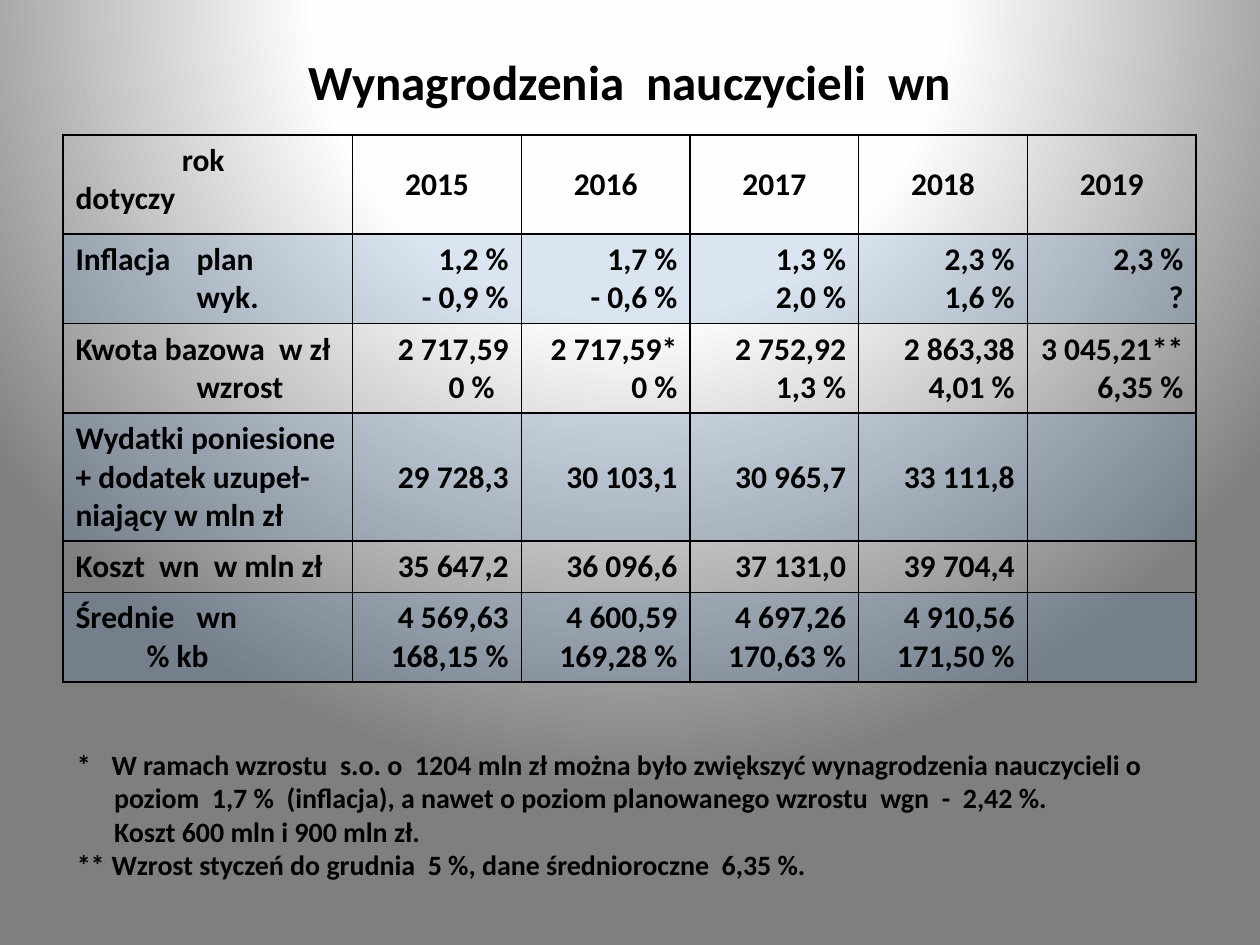
from dataclasses import dataclass

from pptx import Presentation
from pptx.dml.color import RGBColor
from pptx.enum.text import MSO_ANCHOR, PP_ALIGN
from pptx.oxml import parse_xml
from pptx.oxml.ns import nsdecls
from pptx.util import Cm, Pt

LEFT, CENTER, RIGHT = PP_ALIGN.LEFT, PP_ALIGN.CENTER, PP_ALIGN.RIGHT
TOP, MIDDLE = MSO_ANCHOR.TOP, MSO_ANCHOR.MIDDLE

FONT = "Calibri"
COLORS = {"text": "000000", "border": "000000", "band": "4F81BD",
          "glow": "FFFFFF", "halo": "FEFEFE", "edge": "7F7F7F"}
BAND_OPACITY = 20
LABEL_TAB = 2.44
NOTE_TAB = 0.7


@dataclass
class Line:
    text: str
    indent: float = 0
    tab: float = 0


@dataclass
class Row:
    height: float
    label: list[Line]
    values: list[str]
    banded: bool = False
    align: PP_ALIGN = RIGHT
    label_anchor: MSO_ANCHOR = MIDDLE


COLUMN_WIDTHS = [5.84] + [3.4] * 5
ROWS = [
    Row(2, [Line("rok", 2.14), Line("dotyczy")],
        ["2015", "2016", "2017", "2018", "2019"], align=CENTER, label_anchor=TOP),
    Row(1.8, [Line("Inflacja\tplan", tab=LABEL_TAB), Line("wyk.", LABEL_TAB)],
        ["1,2 %\n- 0,9 %", "1,7 %\n- 0,6 %", "1,3 %\n2,0 %", "2,3 %\n1,6 %", "2,3 %\n?"],
        banded=True),
    Row(1.8, [Line("Kwota bazowa  w zł"), Line("wzrost", LABEL_TAB)],
        ["2 717,59\n0 %  ", "2 717,59*\n0 %", "2 752,92\n1,3 %", "2 863,38\n4,01 %",
         "3 045,21**\n6,35 %"]),
    Row(2.58, [Line("Wydatki poniesione"), Line("+ dodatek uzupeł-"), Line("niający w mln zł")],
        ["29 728,3", "30 103,1", "30 965,7", "33 111,8", ""], banded=True),
    Row(1.03, [Line("Koszt  wn  w mln zł")],
        ["35 647,2", "36 096,6", "37 131,0", "39 704,4", ""]),
    Row(1.8, [Line("Średnie   wn".replace("   ", "\t"), tab=LABEL_TAB), Line("% kb", 1.43)],
        ["4 569,63\n168,15 %", "4 600,59\n169,28 %", "4 697,26\n170,63 %",
         "4 910,56\n171,50 %", ""], banded=True),
]
NOTES = [
    Line("*\tW ramach wzrostu  s.o. o  1204 mln zł można było zwiększyć "
         "wynagrodzenia nauczycieli o", tab=NOTE_TAB),
    Line("poziom  1,7 %  (inflacja), a nawet o poziom planowanego wzrostu  wgn  -  2,42 %.", 0.75),
    Line("Koszt 600 mln i 900 mln zł.", 0.75),
    Line("**\tWzrost styczeń do grudnia  5 %, dane średnioroczne  6,35 %.", tab=NOTE_TAB),
]


def write_lines(frame, lines: list[Line], *, size: float = 18, align: PP_ALIGN = LEFT) -> None:
    """Write one bold paragraph per line, with its indent and tab stop."""
    for index, line in enumerate(lines):
        paragraph = frame.paragraphs[0] if index == 0 else frame.add_paragraph()
        paragraph.alignment = align
        properties = paragraph._p.get_or_add_pPr()
        if line.indent:
            properties.set("marL", str(Cm(line.indent)))
        if line.tab:
            properties.append(parse_xml(
                f'<a:tabLst {nsdecls("a")}><a:tab pos="{Cm(line.tab)}" algn="l"/></a:tabLst>'))
        run = paragraph.add_run()
        run.text = line.text
        run.font.name = FONT
        run.font.size = Pt(size)
        run.font.bold = True
        run.font.color.rgb = RGBColor.from_string(COLORS["text"])


def set_background(slide) -> None:
    """Radial gradient centred above the slide."""
    stops = "".join(
        f'<a:gs pos="{position * 1000}"><a:srgbClr val="{COLORS[name]}"/></a:gs>'
        for position, name in ((0, "glow"), (40, "halo"), (100, "edge")))
    slide.element.cSld.insert(0, parse_xml(
        f'<p:bg {nsdecls("p", "a")}><p:bgPr><a:gradFill rotWithShape="1">'
        f'<a:gsLst>{stops}</a:gsLst><a:path path="circle">'
        '<a:fillToRect l="50000" t="-80000" r="50000" b="180000"/></a:path>'
        '</a:gradFill><a:effectLst/></p:bgPr></p:bg>'))


def style_cell(cell, *, banded: bool, anchor: MSO_ANCHOR) -> None:
    """Set borders, fill and vertical position of a cell."""
    cell.vertical_anchor = anchor
    properties = cell._tc.get_or_add_tcPr()
    for side in "LRTB":
        properties.append(parse_xml(
            f'<a:ln{side} {nsdecls("a")} w="{Pt(1)}"><a:solidFill>'
            f'<a:srgbClr val="{COLORS["border"]}"/></a:solidFill></a:ln{side}>'))
    if not banded:
        cell.fill.background()
        return
    cell.fill.solid()
    cell.fill.fore_color.rgb = RGBColor.from_string(COLORS["band"])
    properties.find(".//{*}solidFill/{*}srgbClr[@val='%s']" % COLORS["band"]).append(
        parse_xml(f'<a:alpha {nsdecls("a")} val="{BAND_OPACITY * 1000}"/>'))


def add_pay_table(slide) -> None:
    heights = [row.height for row in ROWS]
    table = slide.shapes.add_table(
        len(ROWS), len(COLUMN_WIDTHS), Cm(1.27), Cm(2.72),
        Cm(sum(COLUMN_WIDTHS)), Cm(sum(heights))).table
    table.first_row = False
    table.horz_banding = False
    for column, width in zip(table.columns, COLUMN_WIDTHS):
        column.width = Cm(width)
    for row_index, row in enumerate(ROWS):
        table.rows[row_index].height = Cm(row.height)
        label = table.cell(row_index, 0)
        style_cell(label, banded=row.banded, anchor=row.label_anchor)
        write_lines(label.text_frame, row.label)
        for column_index, value in enumerate(row.values, start=1):
            cell = table.cell(row_index, column_index)
            style_cell(cell, banded=row.banded, anchor=MIDDLE)
            if value:
                lines = [Line(text) for text in value.split("\n")]
                write_lines(cell.text_frame, lines, align=row.align)


def main() -> None:
    presentation = Presentation()
    presentation.slide_width, presentation.slide_height = Cm(25.4), Cm(19.05)
    slide = presentation.slides.add_slide(presentation.slide_layouts[5])
    set_background(slide)

    # Title
    title = slide.shapes.title
    title.left, title.top, title.width, title.height = Cm(1.27), Cm(0.76), Cm(22.86), Cm(1.75)
    title.text_frame.vertical_anchor = MIDDLE
    write_lines(title.text_frame, [Line("Wynagrodzenia  nauczycieli  wn")], size=28, align=CENTER)

    # Pay by year
    add_pay_table(slide)

    # Footnotes
    notes = slide.shapes.add_textbox(Cm(1.3), Cm(14.94), Cm(22.81), Cm(3.68))
    notes.text_frame.word_wrap = True
    write_lines(notes.text_frame, NOTES, size=16)

    presentation.save("out.pptx")


if __name__ == "__main__":
    main()
